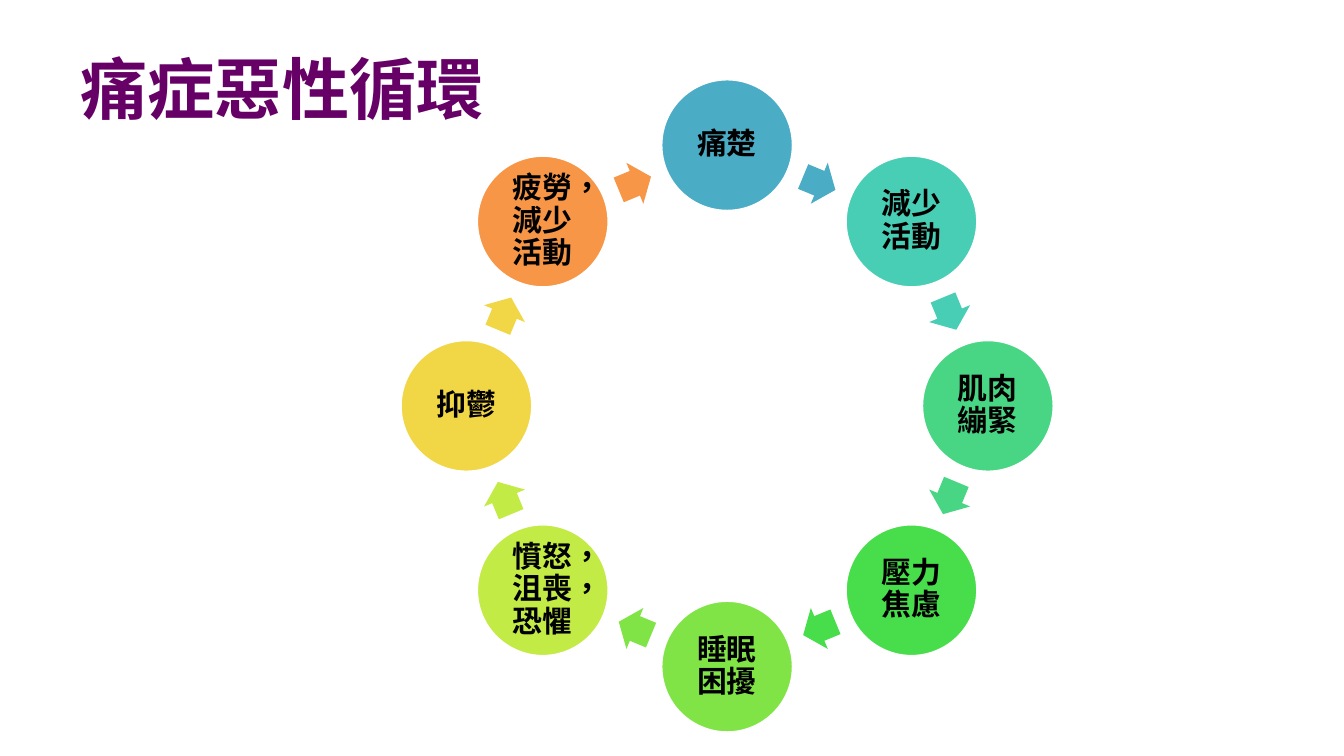
import math
from dataclasses import dataclass

import pptx
import pptx.dml.color
import pptx.enum.lang
import pptx.enum.shapes
import pptx.enum.text
import pptx.util
from pptx.util import Inches

CENTER_X, CENTER_Y, RADIUS = 5.41, 3.02, 1.94
STAGE_SIZE, LABEL_SIZE = 0.99, 0.7
ARROW_LENGTH, ARROW_WIDTH = 0.26, 0.33


@dataclass
class Stage:
    label: str
    color: str


STAGES = [
    Stage("痛楚", "4BACC6"),
    Stage("減少活動", "49CEB6"),
    Stage("肌肉繃緊", "48D684"),
    Stage("壓力焦慮", "47DD4B"),
    Stage("睡眠困擾", "80E446"),
    Stage("憤怒，沮喪，恐懼", "C3EB46"),
    Stage("抑鬱", "F1D746"),
    Stage("疲勞，減少活動", "F79646"),
]


def rgb(value: str) -> pptx.dml.color.RGBColor:
    return pptx.dml.color.RGBColor.from_string(value)


def box(x: float, y: float, width: float, height: float) -> tuple:
    return tuple(Inches(v) for v in (x - width / 2, y - height / 2, width, height))


def on_ring(angle: float, radius: float) -> tuple[float, float]:
    turn = math.radians(angle)
    return CENTER_X + radius * math.sin(turn), CENTER_Y - radius * math.cos(turn)


def write(frame, text: str, size: int, font: str, color: str) -> None:
    frame.word_wrap = True
    run = frame.paragraphs[0].add_run()
    run.text = text
    run.font.size = pptx.util.Pt(size)
    run.font.name = font
    run.font.bold = True
    run.font.color.rgb = rgb(color)
    run.font.language_id = pptx.enum.lang.MSO_LANGUAGE_ID.TRADITIONAL_CHINESE


def draw_stage(cycle, stage: Stage, angle: float) -> None:
    x, y = on_ring(angle, RADIUS)
    circle = cycle.shapes.add_shape(
        pptx.enum.shapes.MSO_SHAPE.OVAL, *box(x, y, STAGE_SIZE, STAGE_SIZE))
    circle.shadow.inherit = False
    circle.fill.solid()
    circle.fill.fore_color.rgb = rgb(stage.color)
    circle.line.color.rgb = rgb("FFFFFF")
    circle.line.width = pptx.util.Pt(2)

    frame = cycle.shapes.add_textbox(*box(x, y, LABEL_SIZE, LABEL_SIZE)).text_frame
    frame.margin_left = frame.margin_right = Inches(0.02)
    frame.margin_top = frame.margin_bottom = Inches(0.02)
    frame.vertical_anchor = pptx.enum.text.MSO_ANCHOR.MIDDLE
    write(frame, stage.label, 16, "Calibri", "000000")
    frame.paragraphs[0].alignment = pptx.enum.text.PP_ALIGN.CENTER
    frame.paragraphs[0].line_spacing = 0.9


def draw_arrow(cycle, color: str, angle: float, radius: float) -> None:
    x, y = on_ring(angle, radius)
    arrow = cycle.shapes.add_shape(
        pptx.enum.shapes.MSO_SHAPE.RIGHT_ARROW, *box(x, y, ARROW_LENGTH, ARROW_WIDTH))
    arrow.adjustments[0] = 0.6
    arrow.adjustments[1] = 0.5
    arrow.rotation = angle
    arrow.shadow.inherit = False
    arrow.fill.solid()
    arrow.fill.fore_color.rgb = rgb(color)
    arrow.line.fill.background()


def main() -> None:
    deck = pptx.Presentation()
    deck.slide_width, deck.slide_height = Inches(10), Inches(10 * 9 / 16)
    slide = deck.slides.add_slide(deck.slide_layouts[6])

    title = slide.shapes.add_textbox(Inches(0.5), Inches(0.3), Inches(8.99), Inches(1.01))
    write(title.text_frame, "痛症惡性循環", 36, "Arial", "660066")

    cycle = slide.shapes.add_group_shape()
    step = 360 / len(STAGES)
    arrow_radius = RADIUS * math.cos(math.radians(step / 2))
    for index, stage in enumerate(STAGES):
        draw_stage(cycle, stage, index * step)
        draw_arrow(cycle, stage.color, (index + 0.5) * step, arrow_radius)

    deck.save("out.pptx")


if __name__ == "__main__":
    main()
